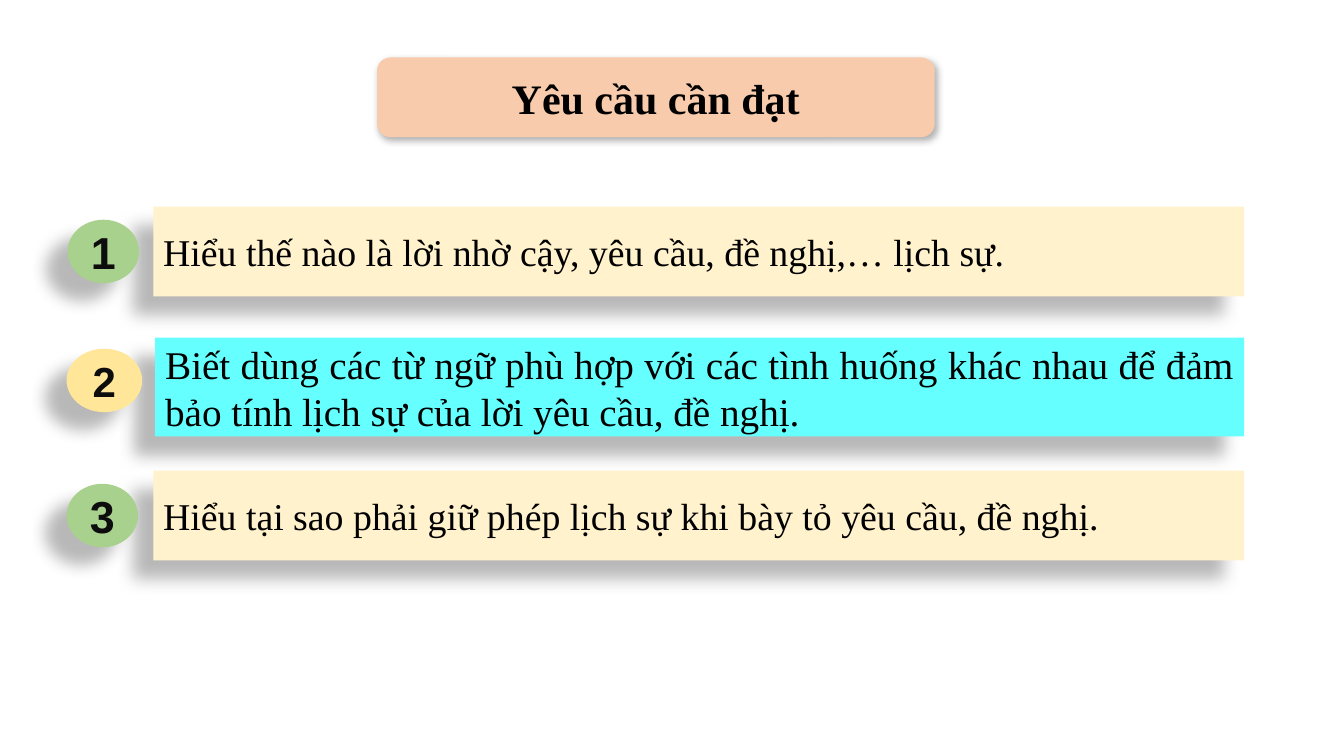
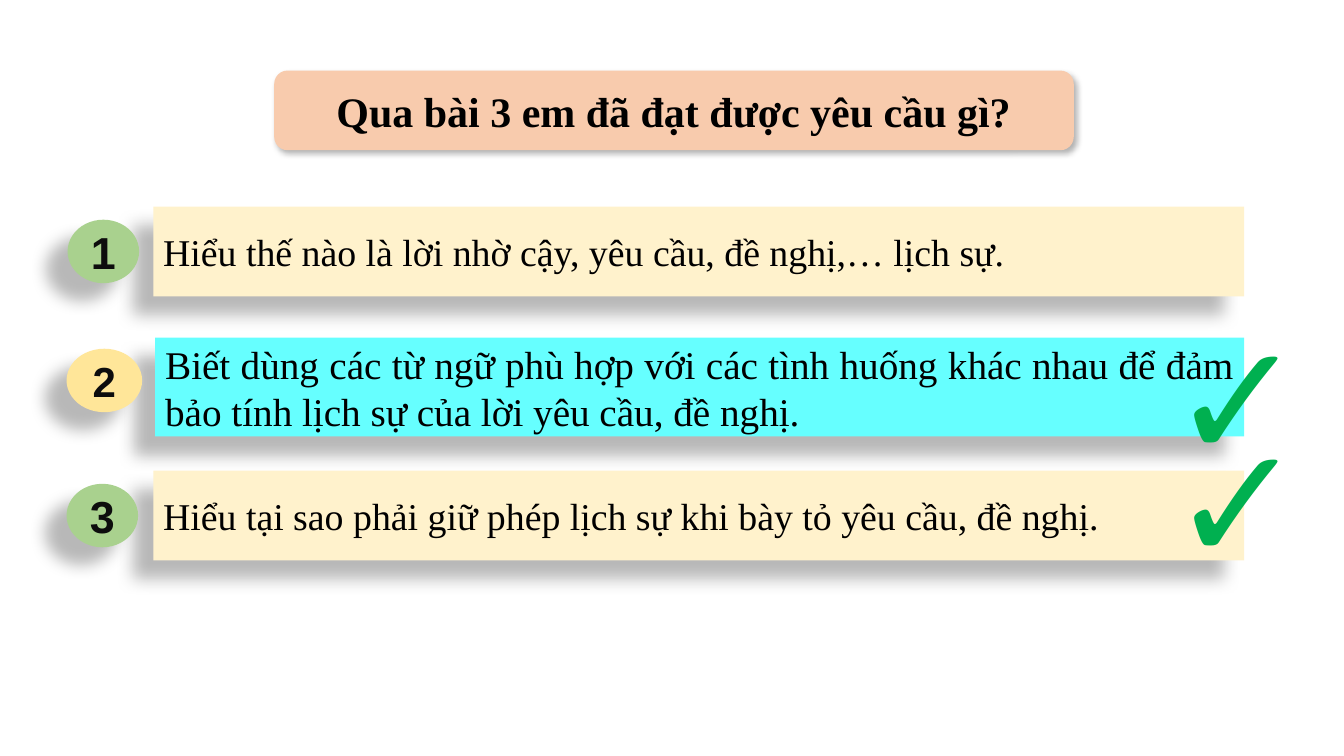
import pptx
import pptx.util
import pptx.dml.color
import pptx.enum.shapes
import pptx.enum.text
import lxml.etree

Inches = pptx.util.Inches
Shape = pptx.enum.shapes.MSO_SHAPE
Align = pptx.enum.text.PP_ALIGN
Anchor = pptx.enum.text.MSO_ANCHOR

COLORS = {
    "title": "F8CBAD", "cream": "FFF2CC", "cyan": "66FFFF",
    "green": "A9D18E", "yellow": "FFE699", "tick": "00B050",
    "text": "000000", "digit": "0D0D0D",
}
SERIF = "Times New Roman"

# opacity %, blur pt, distance pt, direction in degrees
SOFT = (30, 4.5, 2.6, 53)
DEEP = (28, 11.8, 19.7, 141)

# text, bar colour, text size, bar left, top, height,
# badge colour, digit size, badge left, top, width
GOALS = [
    ("Hiểu thế nào là lời nhờ cậy, yêu cầu, đề nghị,… lịch sự.",
     "cream", 27, 1.52, 2.05, 0.89, "green", 32, 0.67, 2.18, 0.71),
    ("Biết dùng các từ ngữ phù hợp với các tình huống khác nhau để đảm "
     "bảo tính lịch sự của lời yêu cầu, đề nghị.",
     "cyan", 28, 1.54, 3.35, 0.98, "yellow", 30, 0.66, 3.46, 0.75),
    ("Hiểu tại sao phải giữ phép lịch sự khi bày tỏ yêu cầu, đề nghị.",
     "cream", 27, 1.52, 4.67, 0.89, "green", 32, 0.66, 4.8, 0.71),
]
BAR_END = 12.34
BADGE_H = 0.63

# title, its left, top and width, tops of the ticks
SLIDES = [
    ("Yêu cầu cần đạt", 3.74, 0.57, 5.53, []),
    ("Qua bài 3 em đã đạt được yêu cầu gì?", 2.72, 0.7, 7.93, [3.92, 2.9]),
]


def paint(color):
    return pptx.dml.color.RGBColor.from_string(COLORS[color])


def cast(shape, shadow):
    """Give the shape an outer shadow."""
    alpha, blur, dist, angle = shadow
    shape.shadow.inherit = False
    effects = shape._element.spPr.find(pptx.oxml.ns.qn("a:effectLst"))
    outer = lxml.etree.SubElement(
        effects, pptx.oxml.ns.qn("a:outerShdw"),
        blurRad=str(pptx.util.Pt(blur)), dist=str(pptx.util.Pt(dist)),
        dir=str(angle * 60000), algn="ctr", rotWithShape="0")
    black = lxml.etree.SubElement(
        outer, pptx.oxml.ns.qn("a:srgbClr"), val=COLORS["text"])
    lxml.etree.SubElement(
        black, pptx.oxml.ns.qn("a:alpha"), val=str(alpha * 1000))


def write(shape, text, size, font, color, align, bold=False):
    frame = shape.text_frame
    frame.word_wrap = True
    frame.text = text
    line = frame.paragraphs[0]
    line.alignment = align
    face = line.runs[0].font
    face.size = pptx.util.Pt(size)
    face.name = font
    face.bold = bold
    face.color.rgb = paint(color)


def block(shapes, kind, box, fill, shadow):
    shape = shapes.add_shape(kind, *map(Inches, box))
    shape.fill.solid()
    shape.fill.fore_color.rgb = paint(fill)
    shape.line.fill.background()
    shape.text_frame.vertical_anchor = Anchor.MIDDLE
    cast(shape, shadow)
    return shape


def add_goal(slide, num, goal):
    """Draw one bar with its numbered badge as a group."""
    text, fill, size, left, top, high, hue, digit, x, y, wide = goal
    group = slide.shapes.add_group_shape().shapes
    bar = block(group, Shape.RECTANGLE,
                (left, top, BAR_END - left, high), fill, DEEP)
    write(bar, text, size, SERIF, "text", Align.JUSTIFY)
    badge = block(group, Shape.OVAL, (x, y, wide, BADGE_H), hue, DEEP)
    write(badge, str(num), digit, "Arial", "digit", Align.CENTER, True)


def add_tick(slide, top):
    box = slide.shapes.add_textbox(*map(Inches, (11.51, top, 0.95, 2.04)))
    write(box, "✓", 115, "Calibri", "tick", Align.LEFT)
    box.text_frame.auto_size = pptx.enum.text.MSO_AUTO_SIZE.SHAPE_TO_FIT_TEXT


def main():
    deck = pptx.Presentation()
    deck.slide_width, deck.slide_height = Inches(13.33), Inches(7.5)
    for title, left, top, wide, ticks in SLIDES:
        slide = deck.slides.add_slide(deck.slide_layouts[6])
        head = block(slide.shapes, Shape.ROUNDED_RECTANGLE,
                     (left, top, wide, 0.79), "title", SOFT)
        write(head, title, 30, SERIF, "text", Align.CENTER, True)
        for num, goal in enumerate(GOALS, 1):
            add_goal(slide, num, goal)
        for tick in ticks:
            add_tick(slide, tick)
    deck.save("out.pptx")


if __name__ == "__main__":
    main()
